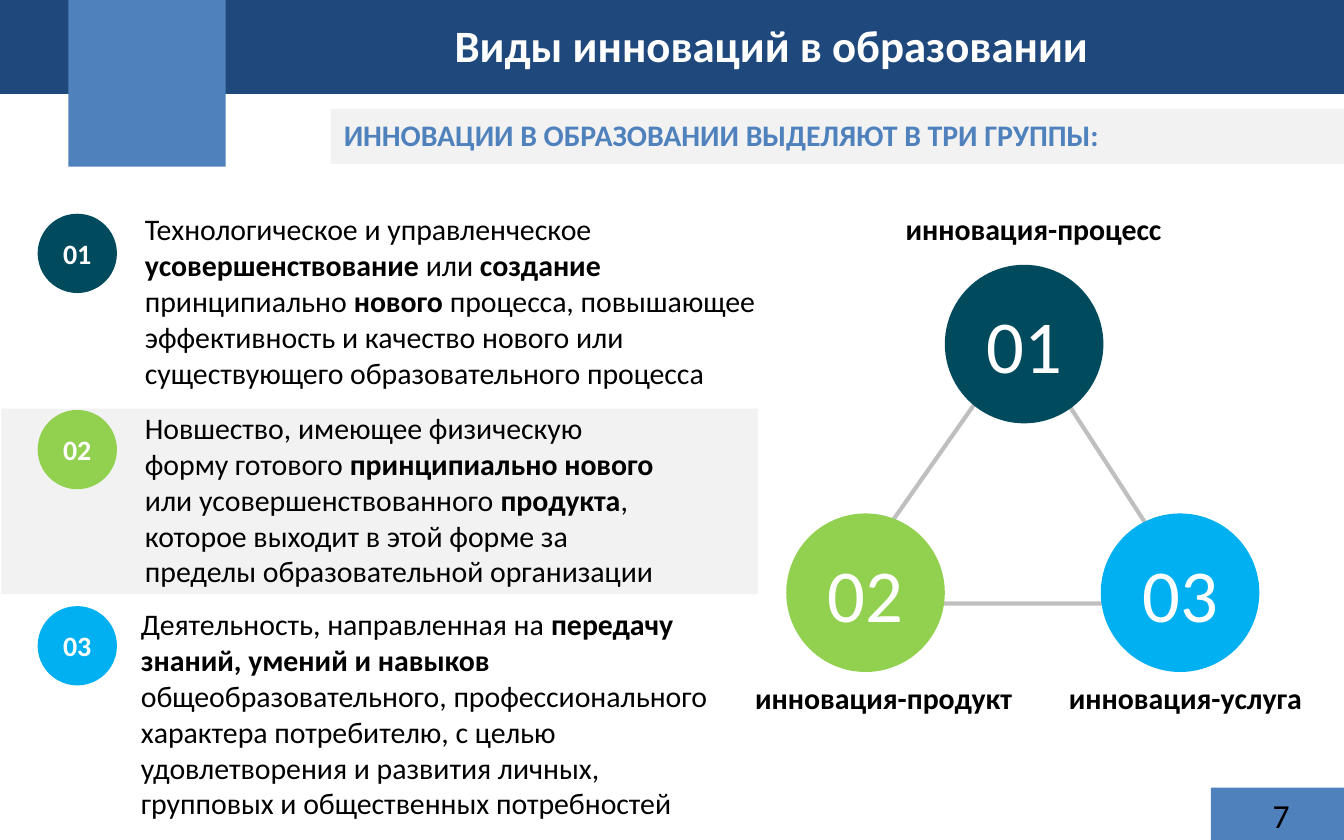
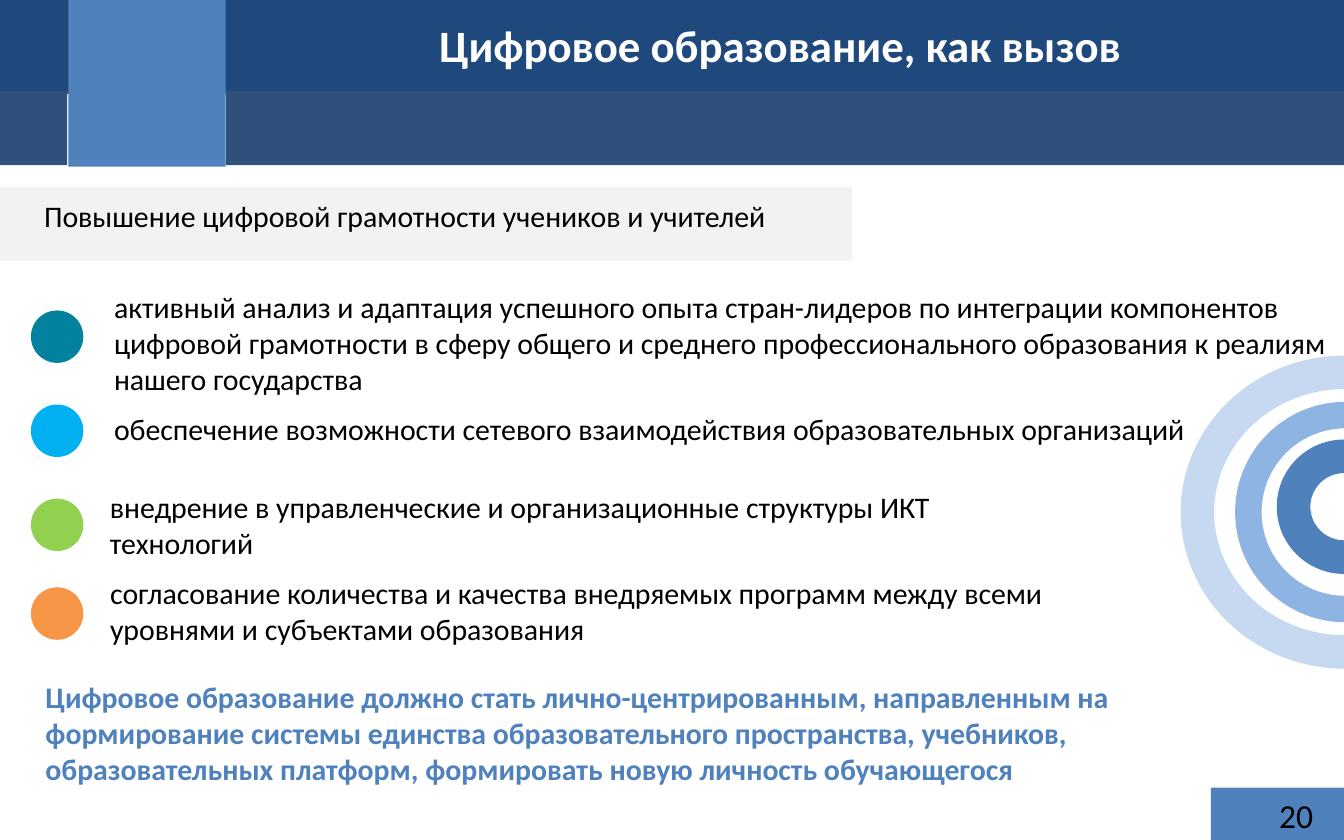
from collections import namedtuple

from pptx import Presentation
from pptx.dml.color import RGBColor
from pptx.enum.shapes import MSO_SHAPE
from pptx.enum.text import MSO_ANCHOR, MSO_AUTO_SIZE, PP_ALIGN
from pptx.util import Inches, Pt

Box = namedtuple("Box", "left top width height")

FONT = "Calibri"
COLORS = {
    "navy": "1F497D", "blue": "4F81BD", "slate": "2E507A", "panel": "F2F2F2",
    "petrol": "004A5E", "teal": "04819E", "green": "92D050", "sky": "00B0F0",
    "orange": "F79646", "gray": "BFBFBF", "mid_ring": "8EB4E3",
    "pale_ring": "C6D9F1", "white": "FFFFFF", "black": "000000",
}
NUMBERED = [("01", "petrol"), ("02", "green"), ("03", "sky")]


def color(name):
    """Return the named palette colour."""
    return RGBColor.from_string(COLORS[name])


def inside(box, left, top, width, height):
    """Return a box placed relative to the corner of another box."""
    return Box(box.left + left, box.top + top, width, height)


def write(frame, text, size, ink, bold=False, align=PP_ALIGN.LEFT):
    """Fill a text frame; words between asterisks are bold, lines are paragraphs."""
    for index, line in enumerate(text.split("\n")):
        para = frame.add_paragraph() if index else frame.paragraphs[0]
        para.alignment = align
        for order, part in enumerate(line.split("*")):
            span = para.add_run()
            span.text = part
            span.font.name = FONT
            span.font.size = Pt(size)
            span.font.bold = bold or order % 2 == 1
            span.font.color.rgb = color(ink)


def add_text(page, box, text, size=16, ink="black", bold=False,
             align=PP_ALIGN.LEFT, wrap=True, middle=False):
    """Add a text box."""
    shape = page.shapes.add_textbox(*map(Inches, box))
    frame = shape.text_frame
    frame.word_wrap = wrap
    if middle:
        frame.vertical_anchor = MSO_ANCHOR.MIDDLE
    else:
        frame.auto_size = MSO_AUTO_SIZE.SHAPE_TO_FIT_TEXT
    write(frame, text, size, ink, bold, align)


def add_figure(page, kind, box, fill=None):
    """Add a preset shape without outline or shadow."""
    shape = page.shapes.add_shape(kind, *map(Inches, box))
    shape.shadow.inherit = False
    shape.line.fill.background()
    if fill:
        shape.fill.solid()
        shape.fill.fore_color.rgb = color(fill)
    else:
        shape.fill.background()
    return shape


def add_band(page, box, fill):
    """Add a plain rectangle."""
    return add_figure(page, MSO_SHAPE.RECTANGLE, box, fill)


def add_disc(page, box, fill, text="", size=15, bold=False):
    """Add a circle with an optional centred number."""
    disc = add_figure(page, MSO_SHAPE.FLOWCHART_CONNECTOR, box, fill)
    if text:
        frame = disc.text_frame
        frame.word_wrap = False
        frame.margin_left = frame.margin_right = 0
        frame.vertical_anchor = MSO_ANCHOR.MIDDLE
        write(frame, text, size, "white", bold, PP_ALIGN.CENTER)


def add_header(page, box):
    """Draw the title band with its square tab."""
    add_band(page, box, "navy")
    add_band(page, inside(box, 0.51, 0, 1.17, 1.24), "blue")


def add_title(page, box, text):
    """Write the slide title."""
    add_text(page, box, text, 24, "white", True, PP_ALIGN.CENTER)


def add_page_number(page, box, number, width):
    """Draw the corner tab with the page number."""
    add_band(page, box, "blue")
    add_text(page, inside(box, 0.36, 0.04, width, 0.33), number, 18,
             align=PP_ALIGN.RIGHT, middle=True)


def add_definitions(page, box):
    """List the three numbered definitions, the second one on a panel."""
    entries = [
        (0.7, 0, 4.97, 1.45,
         "Технологическое и управленческое *усовершенствование* или *создание* "
         "принципиально *нового* процесса, повышающее эффективность и качество "
         "нового или существующего образовательного процесса"),
        (0.7, 1.48, 4.12, 1.45,
         "Новшество, имеющее физическую форму готового *принципиально нового *"
         "или усовершенствованного *продукта*, которое выходит в этой форме "
         "за пределы образовательной организации"),
        (0.67, 2.94, 4.51, 1.72,
         "Деятельность, направленная на *передачу знаний, умений и навыков* "
         "общеобразовательного, профессионального характера потребителю, с целью "
         "удовлетворения и развития личных, групповых и общественных потребностей"),
    ]
    add_band(page, inside(box, -0.27, 1.52, 5.63, 1.38), "panel")
    for index, ((number, fill), (*place, text)) in enumerate(zip(NUMBERED, entries)):
        add_disc(page, inside(box, 0, 0.07 + 1.46 * index, 0.59, 0.59),
                 fill, number, bold=True)
        add_text(page, inside(box, *place), text)


def add_triangle_diagram(page, box):
    """Draw the three kinds of innovation at the corners of a triangle."""
    triangle = add_figure(page, MSO_SHAPE.ISOSCELES_TRIANGLE,
                          inside(box, 0.7, 0.97, 2.7, 2))
    triangle.adjustments[0] = 0.52
    triangle.line.color.rgb = color("gray")
    triangle.line.width = Pt(2.25)
    corners = [(1.52, 0.45), (0.34, 2.3), (2.68, 2.3)]
    for (number, fill), corner in zip(NUMBERED, corners):
        add_disc(page, inside(box, *corner, 1.18, 1.18), fill, number, 40)
    labels = [
        ("инновация-процесс ", 1.09, 0, 2.23, True),
        ("инновация-продукт ", 0, 3.49, 2.18, False),
        ("инновация-услуга ", 2.33, 3.49, 2.01, False),
    ]
    for text, left, top, width, wrap in labels:
        add_text(page, inside(box, left, top, width, 0.37), text,
                 bold=True, align=PP_ALIGN.CENTER, wrap=wrap)


def add_measures(page, box):
    """List the measures, each marked with a coloured disc."""
    measures = [
        ("teal", 0.21, 0.52, 0, 9.25, 0.91,
         "активный анализ и адаптация успешного опыта стран-лидеров по интеграции "
         "компонентов цифровой грамотности в сферу общего и среднего "
         "профессионального образования к реалиям нашего государства"),
        ("sky", 0.91, 0.52, 0.91, 8.35, 0.34,
         "обеспечение возможности сетевого взаимодействия образовательных организаций"),
        ("green", 1.61, 0.49, 1.49, 8.14, 0.64,
         "внедрение в управленческие и организационные структуры ИКТ\nтехнологий"),
        ("orange", 2.27, 0.49, 2.13, 8.08, 0.64,
         "согласование количества и качества внедряемых программ между всеми "
         "уровнями и субъектами образования"),
    ]
    for fill, disc_top, *place, text in measures:
        add_disc(page, inside(box, 0, disc_top, 0.39, 0.39), fill)
        add_text(page, inside(box, *place), text)


def add_rings(page, box):
    """Draw the half rings at the right edge."""
    rings = [
        ("blue", 0.66, 0.68, 1, 1, 0, 0.25),
        ("mid_ring", 0.35, 0.4, 1.64, 1.64, 0.66, 0.12),
        ("pale_ring", 0, 0, 2.33, 2.44, 1.11, 0.107),
    ]
    for fill, *place, end, thickness in rings:
        ring = add_figure(page, MSO_SHAPE.BLOCK_ARC, inside(box, *place), fill)
        ring.rotation = 270
        for index, value in enumerate((108, end, thickness)):
            ring.adjustments[index] = value


def add_subheader(page, box):
    """Draw the darker strip on both sides of the square tab."""
    add_band(page, inside(box, 1.68, 0, 8.32, box.height), "slate")
    add_band(page, inside(box, 0, 0, 0.5, box.height), "slate")


def start_page(deck, number, number_width):
    """Add a blank page with the shared header and page number."""
    page = deck.slides.add_slide(deck.slide_layouts[6])
    add_header(page, Box(0, 0, 10, 0.7))
    add_page_number(page, Box(9.01, 5.86, 0.99, 0.39), number, number_width)
    return page


def build_kinds(deck):
    """Build the page on kinds of innovation."""
    page = start_page(deck, "7", 0.29)
    add_title(page, Box(1.69, 0.08, 8.1, 0.5), "Виды инноваций в образовании")
    add_band(page, Box(2.46, 0.81, 7.54, 0.41), "panel")
    add_text(page, Box(2.46, 0.82, 6.57, 0.37),
             "ИННОВАЦИИ В ОБРАЗОВАНИИ ВЫДЕЛЯЮТ В ТРИ ГРУППЫ:", ink="blue", bold=True)
    add_definitions(page, Box(0.28, 1.52, 5.67, 4.66))
    add_triangle_diagram(page, Box(5.51, 1.52, 4.34, 3.86))


def build_challenge(deck):
    """Build the page on digital education as a challenge."""
    page = start_page(deck, "20", 0.5)
    add_subheader(page, Box(0, 0.68, 10, 0.55))
    add_title(page, Box(1.61, 0.08, 8.39, 0.5), "Цифровое образование, как вызов")
    add_band(page, Box(0, 1.39, 6.34, 0.55), "panel")
    add_text(page, Box(0.23, 1.42, 9.77, 0.37),
             "Повышение цифровой грамотности учеников и учителей")
    add_measures(page, Box(0.23, 2.1, 9.77, 2.77))
    add_rings(page, Box(8.84, 2.59, 2.33, 2.44))
    add_text(page, Box(0.24, 5, 8.77, 0.91),
             "Цифровое образование должно стать лично-центрированным, направленным "
             "на формирование системы единства образовательного пространства, "
             "учебников, образовательных платформ, формировать новую личность "
             "обучающегося", ink="blue", bold=True)


def main():
    """Build and save the deck."""
    deck = Presentation()
    deck.slide_width = Inches(10)
    deck.slide_height = Inches(6.25)
    build_kinds(deck)
    build_challenge(deck)
    deck.save("out.pptx")


if __name__ == "__main__":
    main()
